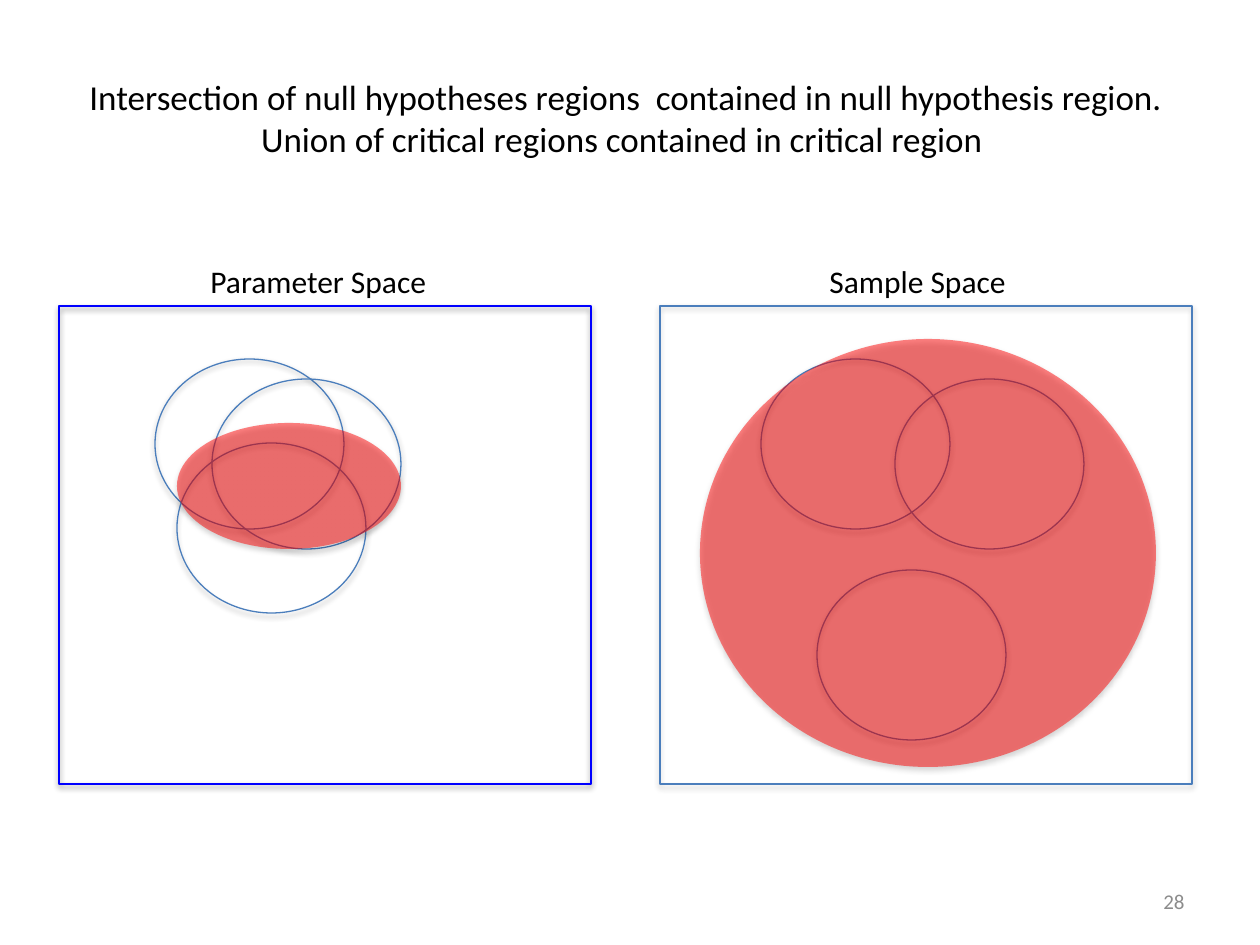
from dataclasses import dataclass
from typing import Optional

from lxml.etree import SubElement as sub
from pptx import Presentation
from pptx.dml.color import RGBColor
from pptx.enum.shapes import MSO_SHAPE as Shape
from pptx.enum.text import MSO_ANCHOR as Anchor, MSO_AUTO_SIZE as Fit, PP_ALIGN as Align
from pptx.oxml.ns import qn
from pptx.util import Emu, Pt

SCALE = 914400 / 126  # EMU per px
BLACK = RGBColor(0x00, 0x00, 0x00)
GRAY = RGBColor(0x8C, 0x8C, 0x8C)
STEEL = RGBColor(0x4B, 0x7E, 0xBC)
BLUE = RGBColor(0x00, 0x00, 0xFF)
RED = RGBColor(0xFF, 0x00, 0x00)
RING = (189, 170)
FRAME = (532, 478)


@dataclass
class Form:
    left: int
    top: int
    size: tuple[int, int]
    kind: Shape = Shape.OVAL
    line: Optional[RGBColor] = STEEL
    width: float = 0.75
    fill: Optional[RGBColor] = None


@dataclass
class Label:
    left: int
    top: int
    size: tuple[int, int]
    text: str
    points: int
    color: RGBColor = BLACK
    align: Align = Align.LEFT
    anchor: Anchor = Anchor.TOP
    wrap: bool = True


def px(n: int) -> Emu:
    return Emu(round(n * SCALE))


def box(item) -> list[Emu]:
    return [px(n) for n in (item.left, item.top, *item.size)]


def add_shadow(shape) -> None:
    shape.shadow.inherit = False
    effects = shape._element.spPr.find(qn("a:effectLst"))
    outer = sub(effects, qn("a:outerShdw"), blurRad="40000", dist="23000",
                dir="5400000", rotWithShape="0")
    color = sub(outer, qn("a:srgbClr"), val="000000")
    sub(color, qn("a:alpha"), val="35000")


def draw_form(slide, form: Form) -> None:
    shape = slide.shapes.add_shape(form.kind, *box(form))
    if form.fill is None:
        shape.fill.background()
    else:
        shape.fill.solid()
        shape.fill.fore_color.rgb = form.fill
        color = shape._element.spPr.find(qn("a:solidFill"))[0]
        sub(color, qn("a:alpha"), val="49000")
    if form.line is None:
        shape.line.fill.background()
    else:
        shape.line.color.rgb = form.line
        shape.line.width = Pt(form.width)
    add_shadow(shape)


def draw_label(slide, label: Label) -> None:
    frame = slide.shapes.add_textbox(*box(label)).text_frame
    frame.word_wrap = label.wrap
    frame.auto_size = Fit.NONE if label.wrap else Fit.SHAPE_TO_FIT_TEXT
    frame.vertical_anchor = label.anchor
    para = frame.paragraphs[0]
    para.text = label.text
    para.alignment = label.align
    para.font.name = "Calibri"
    para.font.size = Pt(label.points)
    para.font.color.rgb = label.color


TITLE = ("Intersection of null hypotheses regions  contained in null hypothesis region.\v"
         "Union of critical regions contained in critical region ")

PARTS = [
    # Sample space
    Form(761, 359, RING),
    Form(895, 379, RING),
    Form(817, 570, RING),
    Form(660, 306, FRAME, Shape.RECTANGLE),
    Label(817, 256, (204, 50), "Sample Space", 18, wrap=False),
    Form(700, 339, (456, 428), line=None, fill=RED),
    # Title and slide number
    Label(59, 38, (1134, 158), TITLE, 20, align=Align.CENTER, anchor=Anchor.MIDDLE),
    Label(903, 876, (294, 50), "28", 12, GRAY, Align.RIGHT, Anchor.MIDDLE),
    # Parameter space
    Form(155, 359, RING),
    Form(212, 379, RING),
    Form(177, 443, RING),
    Form(59, 306, FRAME, Shape.RECTANGLE, BLUE, 1.5),
    Label(198, 256, (243, 50), "Parameter Space", 18, wrap=False),
    Form(177, 423, (224, 126), line=None, fill=RED),
]


def main() -> None:
    deck = Presentation()
    deck.slide_width, deck.slide_height = px(1260), px(945)
    slide = deck.slides.add_slide(deck.slide_layouts[6])
    for part in PARTS:
        if isinstance(part, Form):
            draw_form(slide, part)
        else:
            draw_label(slide, part)
    deck.save("out.pptx")


if __name__ == "__main__":
    main()
